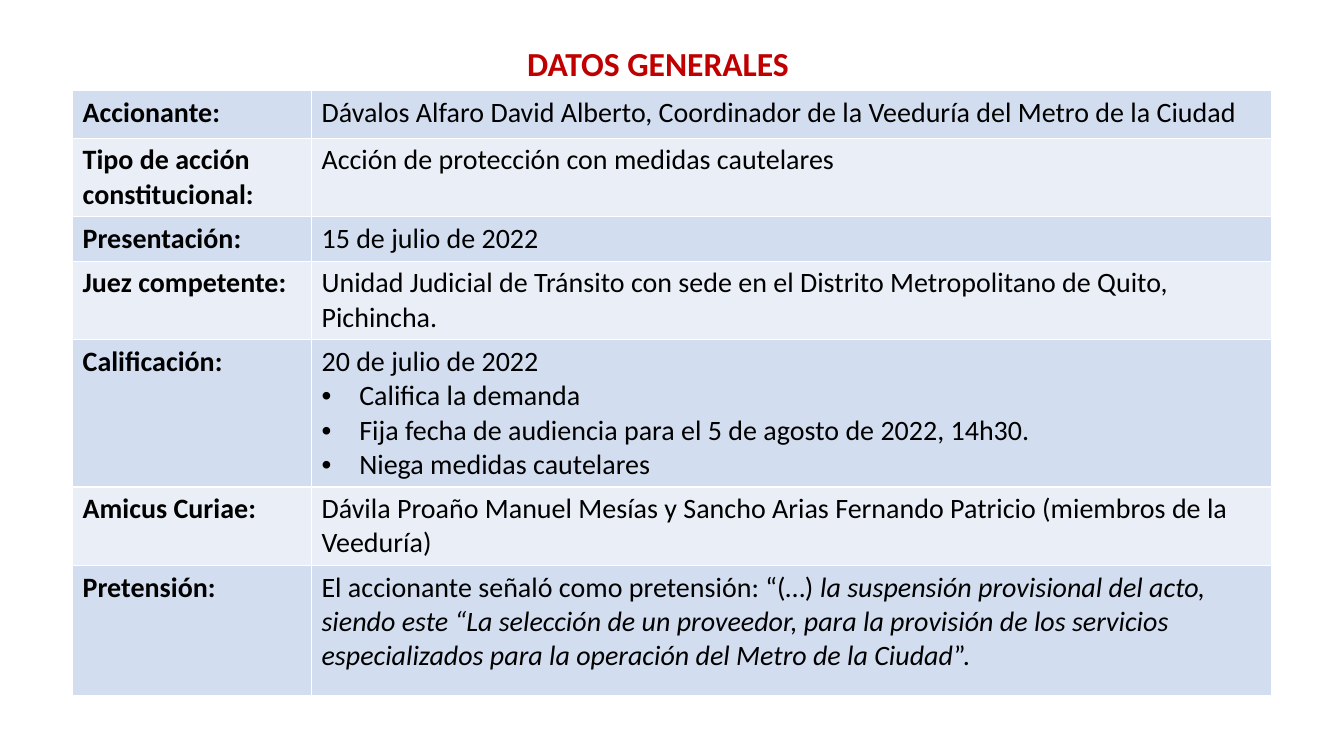
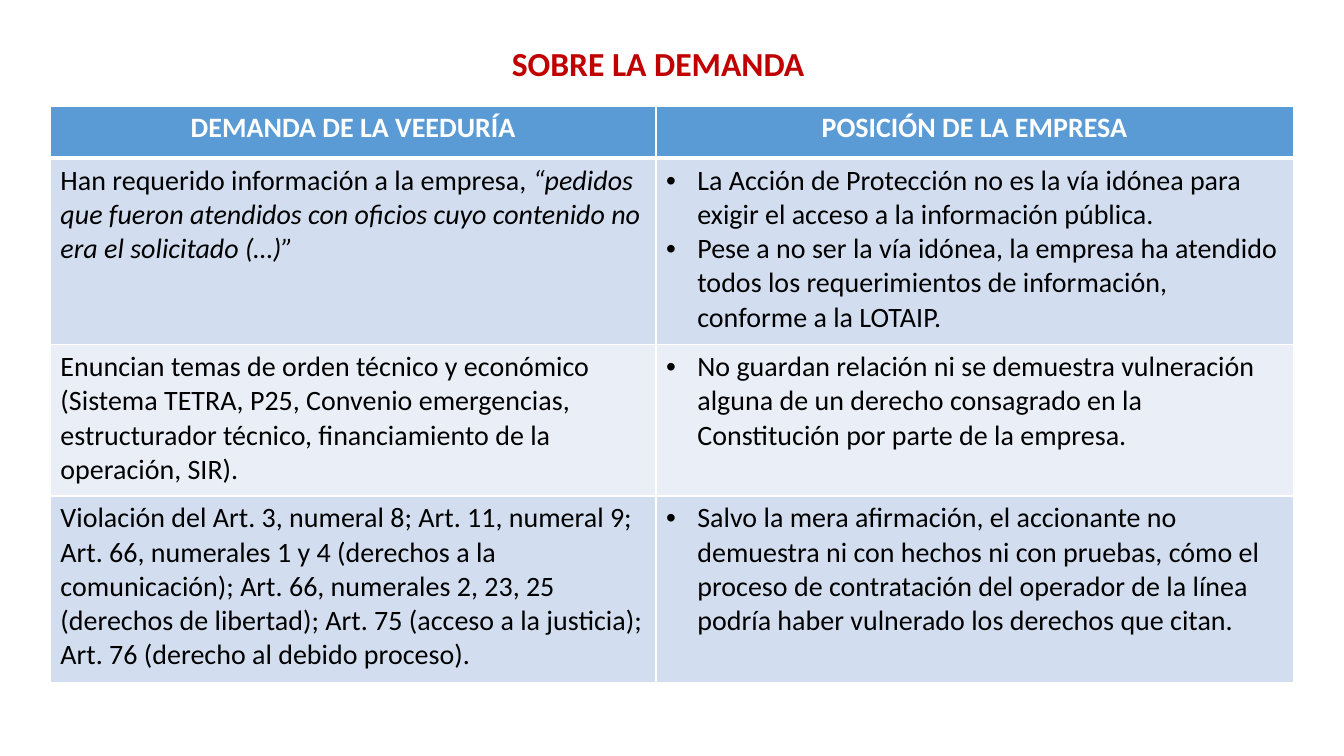
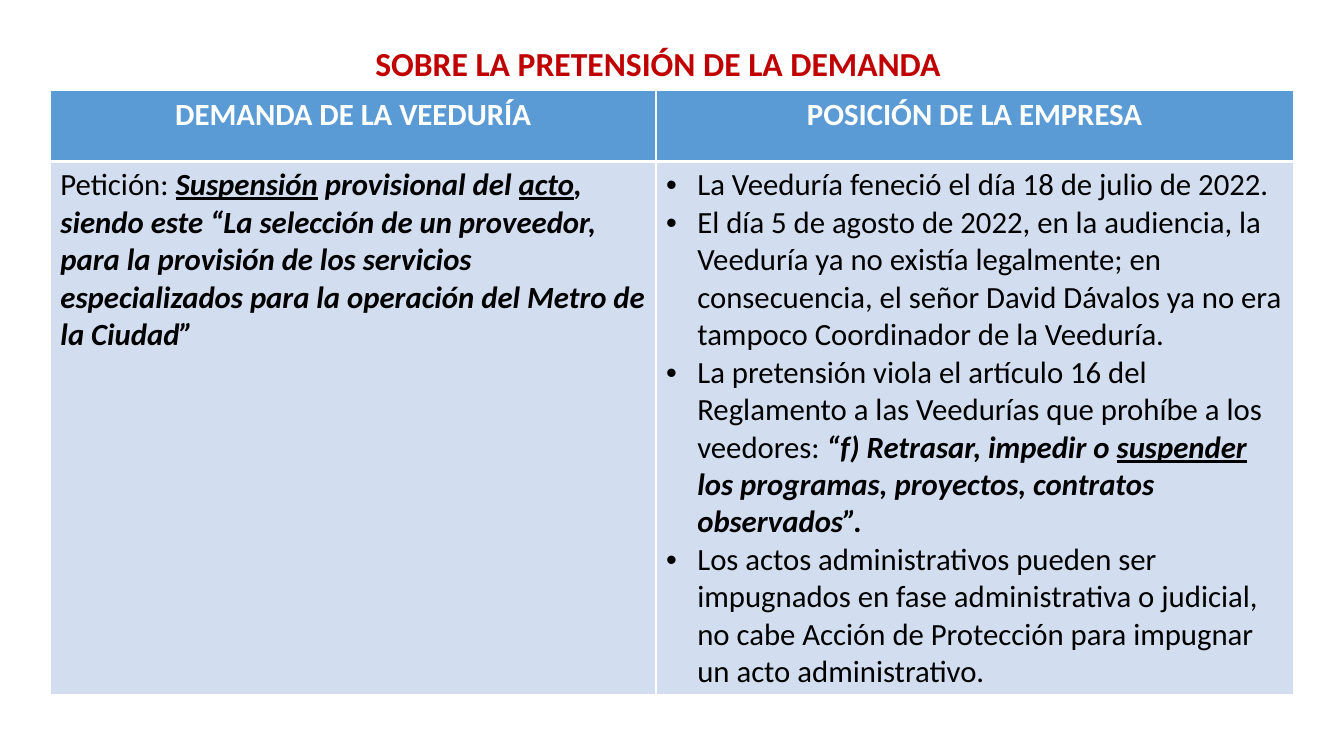
"""Build three slides that summarise a constitutional claim in titled tables."""
from collections import namedtuple

from lxml.etree import SubElement
from pptx import Presentation
from pptx.dml.color import RGBColor
from pptx.enum.text import MSO_ANCHOR, PP_ALIGN
from pptx.oxml.ns import qn
from pptx.util import Cm, Pt

FONT = "Calibri"
RED = RGBColor(0xC0, 0x00, 0x00)
BLACK = RGBColor(0x00, 0x00, 0x00)
WHITE = RGBColor(0xFF, 0xFF, 0xFF)
HEADER_BLUE = RGBColor(0x5B, 0x9B, 0xD5)
BANDS = (RGBColor(0xD2, 0xDE, 0xEF), RGBColor(0xEA, 0xEF, 0xF7))

Bullet = namedtuple("Bullet", "runs")

COMPARISON_HEADER = ("DEMANDA DE LA VEEDURÍA", "POSICIÓN DE LA EMPRESA")
COMPARISON_LEFT = 1.27
COMPARISON_COLUMNS = (15.26, 16.06)

SLIDES = [
    {
        "title": "DATOS GENERALES",
        "header": None,
        "left": 1.83,
        "top": 2.29,
        "columns": (6.02, 24.19),
        "heights": (1.19, 1.98, 1.12, 1.98, 3.71, 1.98, 3.27),
        "size": 20,
        "indent": 0.95,
        "rows": [
            ("Accionante:", "Dávalos Alfaro David Alberto, Coordinador de la Veeduría del Metro de la Ciudad"),
            ("Tipo de acción constitucional:", "Acción de protección con medidas cautelares"),
            ("Presentación:", "15 de julio de 2022"),
            ("Juez competente:",
             "Unidad Judicial de Tránsito con sede en el Distrito Metropolitano de Quito, Pichincha."),
            ("Calificación:", [
                "20 de julio de 2022",
                Bullet("Califica la demanda"),
                Bullet("Fija fecha de audiencia para el 5 de agosto de 2022, 14h30."),
                Bullet("Niega medidas cautelares"),
            ]),
            ("Amicus Curiae:",
             "Dávila Proaño Manuel Mesías y Sancho Arias Fernando Patricio (miembros de la Veeduría)"),
            ("Pretensión:", [(
                ("El accionante señaló como pretensión: “(…) ", ""),
                ("la suspensión provisional del acto, siendo este “La selección de un proveedor, "
                 "para la provisión de los servicios especializados para la operación del Metro de la Ciudad", "i"),
                ("”.", ""),
            )]),
        ],
    },
    {
        "title": "SOBRE LA DEMANDA",
        "header": COMPARISON_HEADER,
        "left": COMPARISON_LEFT,
        "top": 2.67,
        "columns": COMPARISON_COLUMNS,
        "heights": (1.32, 4.7, 3.81, 4.7),
        "size": 20,
        "indent": 0.79,
        "rows": [
            ([(
                ("Han requerido información a la empresa, ", ""),
                ("“pedidos que fueron atendidos con oficios cuyo contenido no era el solicitado (…)”", "i"),
            )], [
                Bullet("La Acción de Protección no es la vía idónea para exigir el acceso "
                       "a la información pública."),
                Bullet("Pese a no ser la vía idónea, la empresa ha atendido todos los requerimientos "
                       "de información, conforme a la LOTAIP."),
            ]),
            ("Enuncian temas de orden técnico y económico (Sistema TETRA, P25, Convenio emergencias, "
             "estructurador técnico, financiamiento de la operación, SIR).",
             [Bullet("No guardan relación ni se demuestra vulneración alguna de un derecho consagrado "
                     "en la Constitución por parte de la empresa.")]),
            ("Violación del Art. 3, numeral 8; Art. 11, numeral 9; Art. 66, numerales 1 y 4 "
             "(derechos a la comunicación); Art. 66, numerales 2, 23, 25 (derechos de libertad); "
             "Art. 75 (acceso a la justicia); Art. 76 (derecho al debido proceso).",
             [Bullet("Salvo la mera afirmación, el accionante no demuestra ni con hechos ni con pruebas, "
                     "cómo el proceso de contratación del operador de la línea podría haber vulnerado "
                     "los derechos que citan.")]),
        ],
    },
    {
        "title": "SOBRE LA PRETENSIÓN DE LA DEMANDA",
        "header": COMPARISON_HEADER,
        "left": COMPARISON_LEFT,
        "top": 2.29,
        "columns": COMPARISON_COLUMNS,
        "heights": (1.78, 13.44),
        "size": 22,
        "indent": 0.79,
        "rows": [
            ([(
                ("Petición: ", ""),
                ("Suspensión", "biu"),
                (" provisional del ", "bi"),
                ("acto", "biu"),
                (", siendo este “La selección de un proveedor, para la provisión de los servicios "
                 "especializados para la operación del Metro de la Ciudad”", "bi"),
            )], [
                Bullet("La Veeduría feneció el día 18 de julio de 2022."),
                Bullet("El día 5 de agosto de 2022, en la audiencia, la Veeduría ya no existía legalmente; "
                       "en consecuencia, el señor David Dávalos ya no era tampoco Coordinador de la Veeduría."),
                Bullet((
                    ("La pretensión viola el artículo 16 del Reglamento a las Veedurías "
                     "que prohíbe a los veedores: ", ""),
                    ("“f) Retrasar, impedir o ", "bi"),
                    ("suspender", "biu"),
                    (" los programas, proyectos, contratos observados”.", "bi"),
                )),
                Bullet("Los actos administrativos pueden ser impugnados en fase administrativa o judicial, "
                       "no cabe Acción de Protección para impugnar un acto administrativo."),
            ]),
        ],
    },
]


def set_font(paragraph, size, color, bold):
    font = paragraph.font
    font.name, font.size, font.bold = FONT, Pt(size), bold
    font.color.rgb = color


def add_title(slide, text):
    box = slide.shapes.add_textbox(Cm(9.04), Cm(0.63), Cm(15.09), Cm(2.06))
    frame = box.text_frame
    frame.word_wrap = True
    frame.vertical_anchor = MSO_ANCHOR.MIDDLE
    paragraph = frame.paragraphs[0]
    paragraph.text = text
    paragraph.alignment = PP_ALIGN.CENTER
    paragraph.line_spacing = 0.9
    set_font(paragraph, 24, RED, True)


def set_borders(cell, bottom_width):
    properties = cell._tc.get_or_add_tcPr()
    for side, width in (("L", 1), ("R", 1), ("T", 1), ("B", bottom_width)):
        line = SubElement(properties, qn(f"a:ln{side}"), w=str(Pt(width)))
        fill = SubElement(line, qn("a:solidFill"))
        SubElement(fill, qn("a:srgbClr"), val=str(WHITE))


def add_bullet(paragraph, indent):
    properties = paragraph._p.get_or_add_pPr()
    properties.set("marL", str(Cm(indent)))
    properties.set("indent", str(-Cm(indent)))
    SubElement(properties, qn("a:buFont"), typeface="Arial")
    SubElement(properties, qn("a:buChar"), char="•")


def fill_paragraph(paragraph, runs):
    if isinstance(runs, str):
        paragraph.text = runs
        return
    for text, style in runs:
        run = paragraph.add_run()
        run.text = text
        for letter, attribute in (("b", "bold"), ("i", "italic"), ("u", "underline")):
            if letter in style:
                setattr(run.font, attribute, True)


def fill_cell(cell, content, size, indent, color, bold, alignment):
    frame = cell.text_frame
    paragraphs = [content] if isinstance(content, str) else content
    for index, item in enumerate(paragraphs):
        paragraph = frame.add_paragraph() if index else frame.paragraphs[0]
        paragraph.alignment = alignment
        if isinstance(item, Bullet):
            add_bullet(paragraph, indent)
            item = item.runs
        fill_paragraph(paragraph, item)
        set_font(paragraph, size, color, bold)


def add_content_table(slide, data):
    header = data["header"]
    rows = ([header] if header else []) + data["rows"]
    widths, heights = data["columns"], data["heights"]
    table = slide.shapes.add_table(
        len(rows), len(widths), Cm(data["left"]), Cm(data["top"]), Cm(sum(widths)), Cm(sum(heights))
    ).table
    table.first_row = table.horz_banding = False
    for column, width in zip(table.columns, widths):
        column.width = Cm(width)
    for row_index, (row, height, contents) in enumerate(zip(table.rows, heights, rows)):
        row.height = Cm(height)
        is_header = contents is header
        band = BANDS[(row_index - bool(header)) % 2]
        for column_index, (cell, content) in enumerate(zip(row.cells, contents)):
            set_borders(cell, 3 if is_header else 1)
            cell.fill.solid()
            cell.fill.fore_color.rgb = HEADER_BLUE if is_header else band
            bold = is_header or (header is None and column_index == 0)
            fill_cell(
                cell, content, data["size"], data["indent"],
                WHITE if is_header else BLACK, bold,
                PP_ALIGN.CENTER if is_header else PP_ALIGN.LEFT,
            )


def main():
    presentation = Presentation()
    presentation.slide_width, presentation.slide_height = Cm(33.87), Cm(19.05)
    for data in SLIDES:
        slide = presentation.slides.add_slide(presentation.slide_layouts[6])
        add_title(slide, data["title"])
        add_content_table(slide, data)
    presentation.save("out.pptx")


if __name__ == "__main__":
    main()
